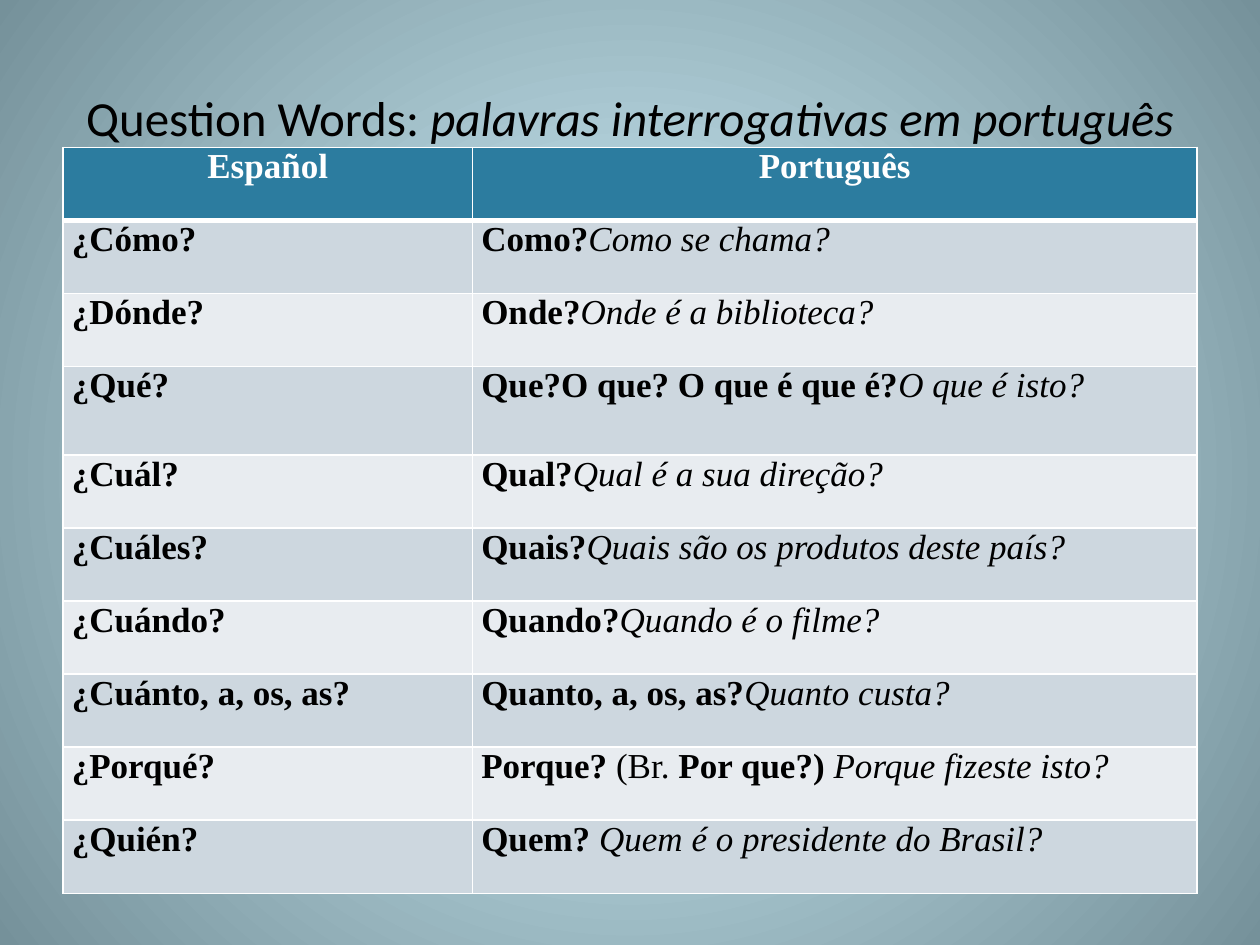
from pptx import Presentation
from pptx.util import Inches, Pt
from pptx.dml.color import RGBColor
from pptx.enum.text import MSO_ANCHOR, PP_ALIGN
from pptx.oxml import parse_xml
from pptx.oxml.ns import nsdecls, qn

BLACK = RGBColor(0x00, 0x00, 0x00)
WHITE = RGBColor(0xFF, 0xFF, 0xFF)
HEADER = RGBColor(0x2C, 0x7C, 0x9F)
BANDS = [RGBColor(0xCD, 0xD7, 0xDF), RGBColor(0xE8, 0xEC, 0xF0)]
GLOW = [RGBColor(0xD5, 0xF5, 0xFF), RGBColor(0x75, 0x91, 0x9A)]

# Each answer is a list of (text, style): b = bold, i = italic
ROWS = [
    ("Español", [("Português", "b")]),
    ("¿Cómo?", [("Como?", "b"), ("Como se chama?", "i")]),
    ("¿Dónde?", [("Onde?", "b"), ("Onde é a biblioteca?", "i")]),
    ("¿Qué?", [("Que?O que? O que é que é?", "b"), ("O que é isto?", "i")]),
    ("¿Cuál?", [("Qual?", "b"), ("Qual é a sua direção?", "i")]),
    ("¿Cuáles?", [("Quais?", "b"), ("Quais são os produtos deste país?", "i")]),
    ("¿Cuándo?", [("Quando?", "b"), ("Quando é o filme?", "i")]),
    ("¿Cuánto, a, os, as?", [("Quanto, a, os, as?", "b"), ("Quanto custa?", "i")]),
    ("¿Porqué?", [("Porque?", "b"), (" (Br. ", ""), ("Por que?) ", "b"),
                  ("Porque fizeste isto?", "i")]),
    ("¿Quién?", [("Quem? ", "b"), ("Quem é o presidente do Brasil?", "i")]),
]
COL_WIDTHS = [3.25, 5.75]
ROW_HEIGHT, TALL_ROW_HEIGHT, TALL_ROW = 0.58, 0.7, 3


def write(p, runs, font, size, color):
    p.font.name, p.font.size, p.font.color.rgb = font, Pt(size), color
    for text, style in runs:
        r = p.add_run()
        r.text = text
        r.font.bold = "b" in style
        r.font.italic = "i" in style


def add_borders(cell, bottom_width):
    tcPr = cell._tc.get_or_add_tcPr()
    for i, (side, width) in enumerate(zip("LRTB", [1, 1, 1, bottom_width])):
        tcPr.insert(i, parse_xml(
            f'<a:ln{side} {nsdecls("a")} w="{Pt(width)}"><a:solidFill>'
            f'<a:srgbClr val="{WHITE}"/></a:solidFill></a:ln{side}>'))


prs = Presentation()
prs.slide_width, prs.slide_height = Inches(10), Inches(7.5)
s = prs.slides.add_slide(prs.slide_layouts[6])

# Background: circular gradient from the centre
fill = s.background.fill
fill.gradient()
for stop, color in zip(fill.gradient_stops, GLOW):
    stop.color.rgb = color
lin = s._element.find(".//" + qn("a:lin"))
lin.getparent().replace(lin, parse_xml(
    f'<a:path {nsdecls("a")} path="circle">'
    '<a:fillToRect l="50000" t="50000" r="50000" b="50000"/></a:path>'))

# Title
tf = s.shapes.add_textbox(Inches(0.5), Inches(0.3), Inches(9), Inches(1.25)).text_frame
tf.word_wrap = True
tf.vertical_anchor = MSO_ANCHOR.MIDDLE
p = tf.paragraphs[0]
p.alignment = PP_ALIGN.CENTER
write(p, [("Question Words: ", ""), ("palavras interrogativas em português", "i")],
      "Calibri", 28, BLACK)

# Table of question words
heights = [TALL_ROW_HEIGHT if i == TALL_ROW else ROW_HEIGHT for i in range(len(ROWS))]
table = s.shapes.add_table(len(ROWS), 2, Inches(0.5), Inches(1.17),
                           Inches(sum(COL_WIDTHS)), Inches(sum(heights))).table
for column, width in zip(table.columns, COL_WIDTHS):
    column.width = Inches(width)

for i, (spanish, portuguese) in enumerate(ROWS):
    table.rows[i].height = Inches(heights[i])
    header = i == 0
    for j, runs in enumerate([[(spanish, "b")], portuguese]):
        cell = table.cell(i, j)
        cell.margin_left = cell.margin_right = Inches(0.07)
        cell.margin_top = cell.margin_bottom = 0
        cell.fill.solid()
        cell.fill.fore_color.rgb = HEADER if header else BANDS[(i - 1) % 2]
        add_borders(cell, 3 if header else 1)
        p = cell.text_frame.paragraphs[0]
        p.alignment = PP_ALIGN.CENTER if header else PP_ALIGN.LEFT
        write(p, runs, "Times New Roman", 20, WHITE if header else BLACK)

prs.save("out.pptx")
